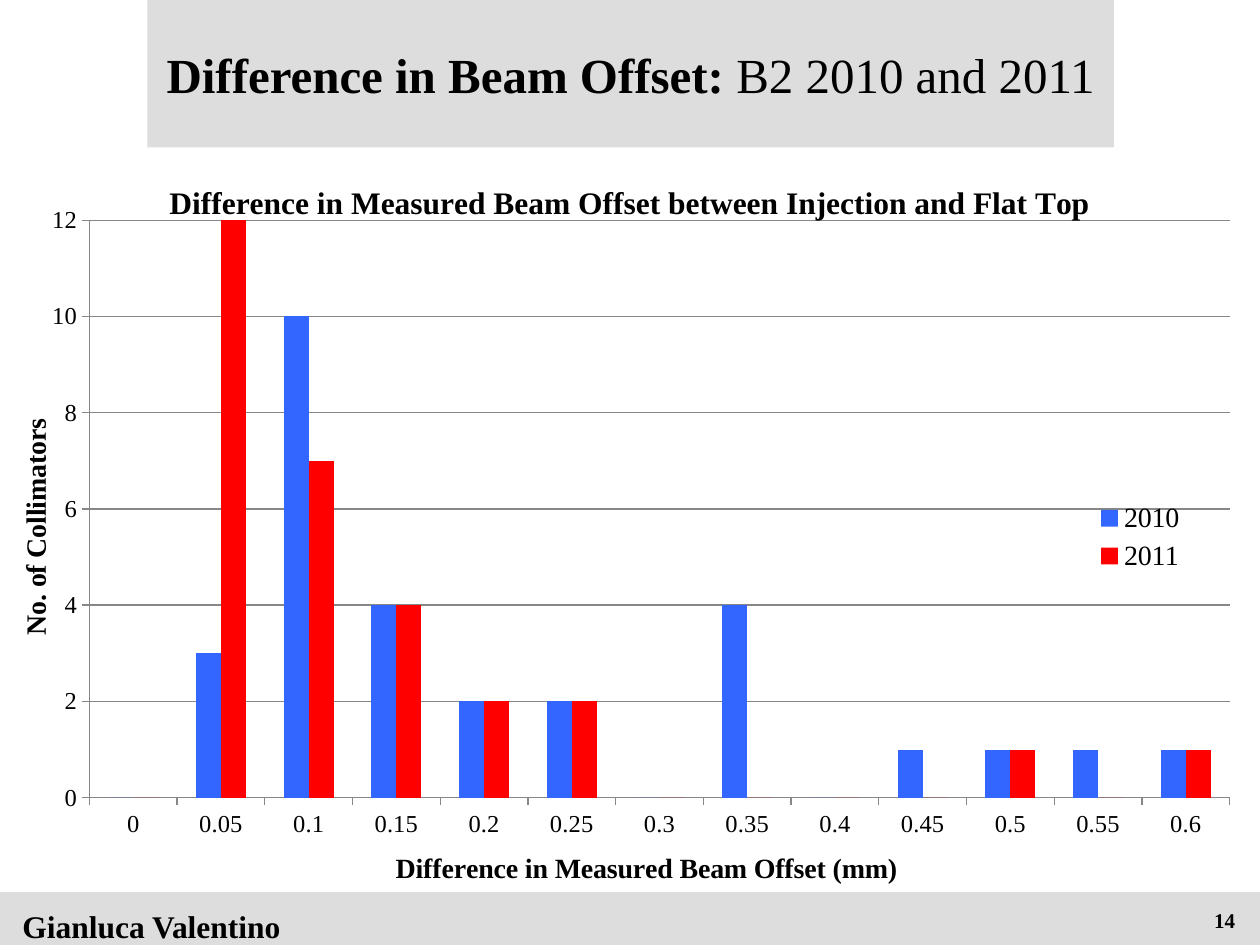
"""Build the beam offset comparison slide."""
from dataclasses import dataclass
from typing import Any

import lxml.etree
import pptx
import pptx.chart.data
import pptx.dml.color
import pptx.enum.chart
import pptx.enum.shapes
import pptx.enum.text
import pptx.oxml.ns
import pptx.util

Inches = pptx.util.Inches
Align = pptx.enum.text.PP_ALIGN
Anchor = pptx.enum.text.MSO_ANCHOR
TickMark = pptx.enum.chart.XL_TICK_MARK


@dataclass(frozen=True)
class Theme:
    """Colours, font and type sizes of the slide."""
    font: str = "Times New Roman"
    text: str = "000000"
    panel: str = "DDDDDD"
    line: str = "878787"
    title: int = 28
    heading: int = 18
    label: int = 16
    tick: int = 14
    number: int = 12


@dataclass(frozen=True)
class Box:
    """A rectangle in inches."""
    left: float
    top: float
    width: float
    height: float

    def lengths(self) -> tuple:
        """Return the four sides as lengths."""
        return tuple(Inches(side) for side in (self.left, self.top, self.width, self.height))


@dataclass(frozen=True)
class Series:
    """One year of collimator counts."""
    name: str
    values: tuple
    color: str


@dataclass(frozen=True)
class Footer:
    """One footer text and its place."""
    text: str
    box: Box
    size: int
    align: Any


THEME = Theme()
TITLE_BOX = Box(1.17, 0, 7.67, 1.17)
FOOTER_BAND = Box(0, 7.08, 10, 0.42)
CHART_BOX = Box(0, 1.17, 10, 5.92)
FOOTERS = (
    Footer("Gianluca Valentino", Box(0.08, 7.15, 2.32, 0.33), THEME.heading, Align.LEFT),
    Footer("14", Box(7.58, 7.15, 2.32, 0.3), THEME.number, Align.RIGHT),
)
CATEGORIES = [f"{step * 0.05:.2f}".rstrip("0").rstrip(".") for step in range(13)]
SERIES = (
    Series("2010", (0, 3, 10, 4, 2, 2, 0, 4, 0, 1, 1, 1, 1), "3366FF"),
    Series("2011", (0, 12, 7, 4, 2, 2, 0, 0, 0, 0, 1, 0, 1), "FF0000"),
)


def rgb(color: str) -> pptx.dml.color.RGBColor:
    """Return a colour from its hex code."""
    return pptx.dml.color.RGBColor.from_string(color)


def format_font(font: Any, size: int, bold: bool = False) -> None:
    """Apply the theme's typeface and colour."""
    font.name = THEME.font
    font.size = pptx.util.Pt(size)
    font.bold = bold
    font.color.rgb = rgb(THEME.text)


def write(frame: Any, text: str, *, size: int, bold: bool = True, align: Any = None) -> None:
    """Append a formatted run to the first paragraph of a text frame."""
    paragraph = frame.paragraphs[0]
    if align is not None:
        paragraph.alignment = align
    run = paragraph.add_run()
    run.text = text
    format_font(run.font, size, bold)


def fill_panel(shape: Any) -> None:
    """Give a shape the plain panel fill."""
    shape.fill.solid()
    shape.fill.fore_color.rgb = rgb(THEME.panel)
    shape.line.fill.background()


def place(element: Any, **settings: Any) -> None:
    """Set a manual layout on a chart part."""
    qn = pptx.oxml.ns.qn
    for layout in element.findall(qn("c:layout")):
        element.remove(layout)
    layout = lxml.etree.Element(qn("c:layout"))
    manual = lxml.etree.SubElement(layout, qn("c:manualLayout"))
    for name, value in settings.items():
        lxml.etree.SubElement(manual, qn(f"c:{name}")).set("val", str(value))
    overlay = element.find(qn("c:overlay"))
    if overlay is None:
        element.insert(0, layout)
    else:
        overlay.addprevious(layout)


def add_heading(owner: Any, text: str, size: int, x: float, y: float) -> None:
    """Write and place the title of a chart or an axis."""
    title = owner.chart_title if hasattr(owner, "chart_title") else owner.axis_title
    write(title.text_frame, text, size=size)
    place(title._element, xMode="edge", yMode="edge", x=x, y=y)


def style_axis(axis: Any) -> None:
    """Format the ticks and line of an axis."""
    axis.major_tick_mark = TickMark.OUTSIDE
    axis.minor_tick_mark = TickMark.NONE
    axis.format.line.color.rgb = rgb(THEME.line)
    format_font(axis.tick_labels.font, THEME.tick)


def add_histogram(slide: Any) -> None:
    """Add the clustered columns of both years."""
    data = pptx.chart.data.CategoryChartData(number_format="General")
    data.categories = CATEGORIES
    for series in SERIES:
        data.add_series(series.name, series.values)
    kind = pptx.enum.chart.XL_CHART_TYPE.COLUMN_CLUSTERED
    chart = slide.shapes.add_chart(kind, *CHART_BOX.lengths(), data).chart
    format_font(chart.font, 10)
    add_heading(chart, "Difference in Measured Beam Offset between Injection and Flat Top",
                THEME.heading, 0.13, 0.04)

    categories, values = chart.category_axis, chart.value_axis
    for axis in (categories, values):
        style_axis(axis)
    add_heading(categories, "Difference in Measured Beam Offset (mm)", THEME.label, 0.31, 0.94)
    add_heading(values, "No. of Collimators", THEME.label, 0.01, 0.36)
    values.minimum_scale, values.maximum_scale, values.major_unit = 0, 12, 2
    values.has_major_gridlines = True
    values.major_gridlines.format.line.color.rgb = rgb(THEME.line)

    plot = chart.plots[0]
    plot.vary_by_categories = False
    plot.gap_width, plot.overlap = 150, 0
    for drawn, series in zip(plot.series, SERIES):
        drawn.format.fill.solid()
        drawn.format.fill.fore_color.rgb = rgb(series.color)
    place(chart._chartSpace.chart.plotArea, layoutTarget="inner", xMode="edge",
          yMode="edge", x=0.071, y=0.098, w=0.905, h=0.778)

    chart.has_legend = True
    chart.legend.position = pptx.enum.chart.XL_LEGEND_POSITION.RIGHT
    chart.legend.include_in_layout = True
    format_font(chart.legend.font, THEME.label)
    place(chart.legend._element, xMode="edge", yMode="edge", x=0.86, y=0.47, w=0.09, h=0.11)


def add_title(slide: Any) -> None:
    """Format the title placeholder."""
    title = slide.shapes.title
    title.left, title.top, title.width, title.height = TITLE_BOX.lengths()
    fill_panel(title)
    title.text_frame.vertical_anchor = Anchor.MIDDLE
    title.text_frame.word_wrap = True
    write(title.text_frame, "Difference in Beam Offset: ", size=THEME.title, align=Align.CENTER)
    write(title.text_frame, "B2 2010 and 2011", size=THEME.title, bold=False)


def add_footer(slide: Any) -> None:
    """Add the footer band and its texts."""
    rectangle = pptx.enum.shapes.MSO_SHAPE.RECTANGLE
    band = slide.shapes.add_shape(rectangle, *FOOTER_BAND.lengths())
    band.shadow.inherit = False
    fill_panel(band)
    for footer in FOOTERS:
        frame = slide.shapes.add_textbox(*footer.box.lengths()).text_frame
        frame.word_wrap = True
        write(frame, footer.text, size=footer.size, align=footer.align)


def main() -> None:
    """Build and save the presentation."""
    presentation = pptx.Presentation()
    presentation.slide_width, presentation.slide_height = Inches(10), Inches(7.5)
    slide = presentation.slides.add_slide(presentation.slide_layouts[5])
    add_title(slide)
    add_footer(slide)
    add_histogram(slide)
    presentation.save("out.pptx")


if __name__ == "__main__":
    main()
